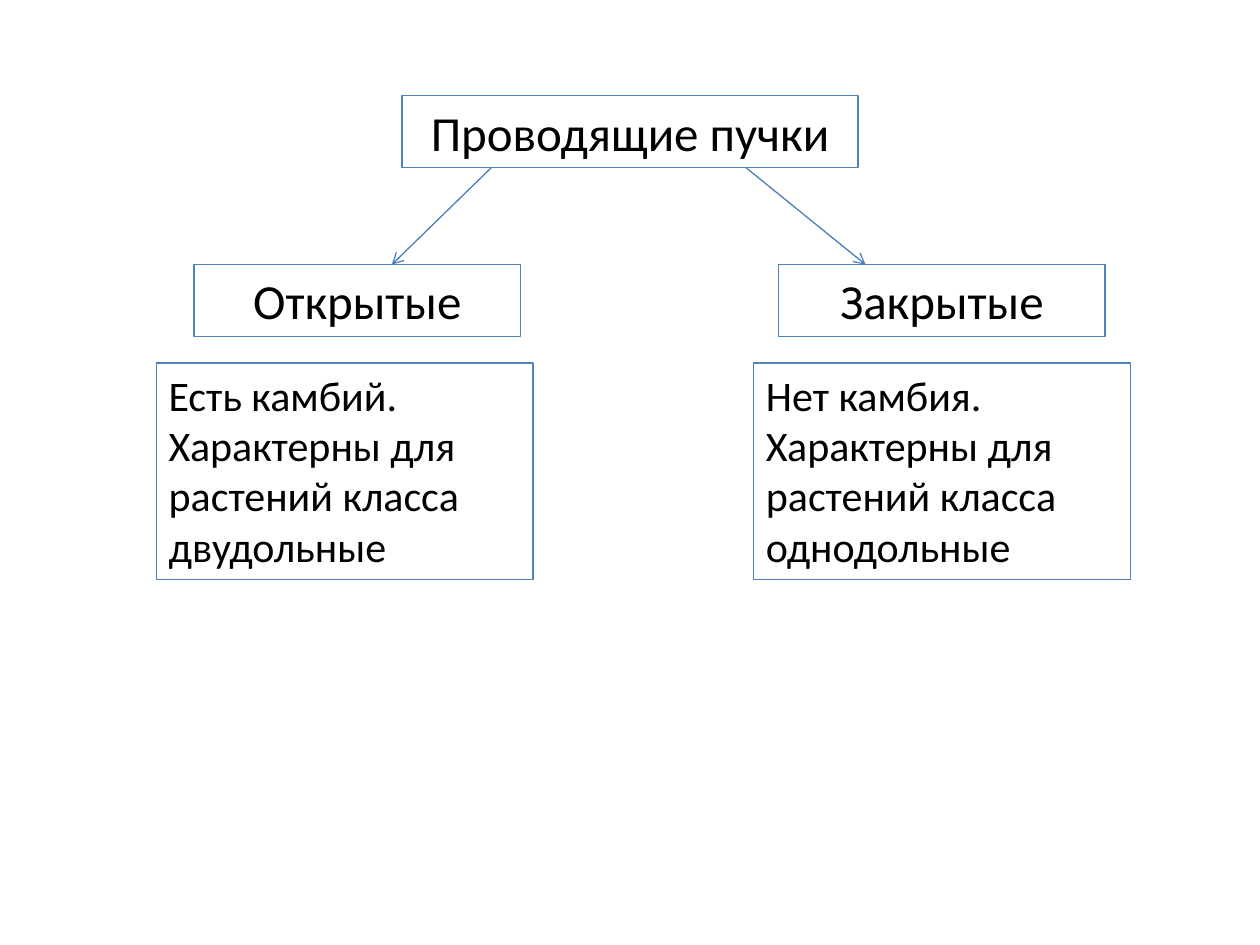
from dataclasses import dataclass

from lxml.etree import SubElement
from pptx import Presentation
from pptx.dml.color import RGBColor
from pptx.enum.shapes import MSO_CONNECTOR
from pptx.enum.text import MSO_ANCHOR, MSO_AUTO_SIZE, PP_ALIGN
from pptx.oxml.ns import qn
from pptx.util import Inches, Pt

BORDER, ARROW, TEXT = "4F81BD", "4B7EBC", "000000"
HEADING = {"size": Pt(28), "name": "Calibri", "bold": False}
BODY = {**HEADING, "size": Pt(24)}
FRAME = {
    "word_wrap": True,
    "vertical_anchor": MSO_ANCHOR.TOP,
    "margin_left": Inches(0.1),
    "margin_right": Inches(0.1),
    "margin_top": Inches(0.05),
    "margin_bottom": Inches(0.05),
}
ROOT_LEFT, ROOT_TOP, ROOT_WIDTH = 3.19, 0.76, 3.62
KIND_TOP, KIND_WIDTH = 2.1, 2.59
DETAIL_TOP, DETAIL_WIDTH, DETAIL_HEIGHT = 2.88, 2.99, 1.72
HEADING_HEIGHT = 0.57


@dataclass
class Branch:
    kind: str
    kind_left: float
    detail: str
    detail_left: float
    arrow_start: float
    arrow_end: float


BRANCHES = [
    Branch("Открытые", 1.54,
           "Есть камбий. Характерны для растений класса двудольные", 1.24,
           3.9, 3.11),
    Branch("Закрытые", 6.18,
           "Нет камбия. Характерны для растений класса однодольные", 5.98,
           5.92, 6.87),
]


def color(value: str) -> RGBColor:
    return RGBColor.from_string(value)


def set_line(line, value: str) -> None:
    line.color.rgb = color(value)
    line.width = Pt(0.75)


def apply(target, values: dict) -> None:
    for name, value in values.items():
        setattr(target, name, value)


def format_box(box, text: str, left: float, top: float, width: float,
               height: float, font: dict, align: PP_ALIGN,
               auto_size: MSO_AUTO_SIZE) -> None:
    apply(box, {"left": Inches(left), "top": Inches(top),
                "width": Inches(width), "height": Inches(height)})
    set_line(box.line, BORDER)
    apply(box.text_frame, {**FRAME, "auto_size": auto_size})
    paragraph = box.text_frame.paragraphs[0]
    paragraph.text = text
    paragraph.alignment = align
    run = paragraph.runs[0]
    apply(run.font, font)
    run.font.color.rgb = color(TEXT)


def add_box(slide, text: str, left: float, top: float, width: float,
            height: float, font: dict, align: PP_ALIGN) -> None:
    format_box(slide.shapes.add_textbox(0, 0, 0, 0), text, left, top, width,
               height, font, align, MSO_AUTO_SIZE.SHAPE_TO_FIT_TEXT)


def add_arrow(slide, start: float, end: float) -> None:
    arrow = slide.shapes.add_connector(
        MSO_CONNECTOR.STRAIGHT,
        Inches(start), Inches(ROOT_TOP + HEADING_HEIGHT),
        Inches(end), Inches(KIND_TOP))
    set_line(arrow.line, ARROW)
    SubElement(arrow.line._get_or_add_ln(), qn("a:tailEnd"), type="arrow")
    SubElement(arrow._element.spPr, qn("a:effectLst"))


def main() -> None:
    presentation = Presentation()
    presentation.slide_width = Inches(10)
    presentation.slide_height = Inches(7.5)
    slide = presentation.slides.add_slide(presentation.slide_layouts[5])

    # Root of the classification: a title of fixed height
    format_box(slide.shapes.title, "Проводящие пучки", ROOT_LEFT, ROOT_TOP,
               ROOT_WIDTH, HEADING_HEIGHT, HEADING, PP_ALIGN.CENTER,
               MSO_AUTO_SIZE.NONE)

    # Arrows, then the kinds, then their descriptions
    for branch in BRANCHES:
        add_arrow(slide, branch.arrow_start, branch.arrow_end)
    for branch in BRANCHES:
        add_box(slide, branch.kind, branch.kind_left, KIND_TOP,
                KIND_WIDTH, HEADING_HEIGHT, HEADING, PP_ALIGN.CENTER)
    for branch in BRANCHES:
        add_box(slide, branch.detail, branch.detail_left, DETAIL_TOP,
                DETAIL_WIDTH, DETAIL_HEIGHT, BODY, PP_ALIGN.LEFT)

    presentation.save("out.pptx")


if __name__ == "__main__":
    main()
